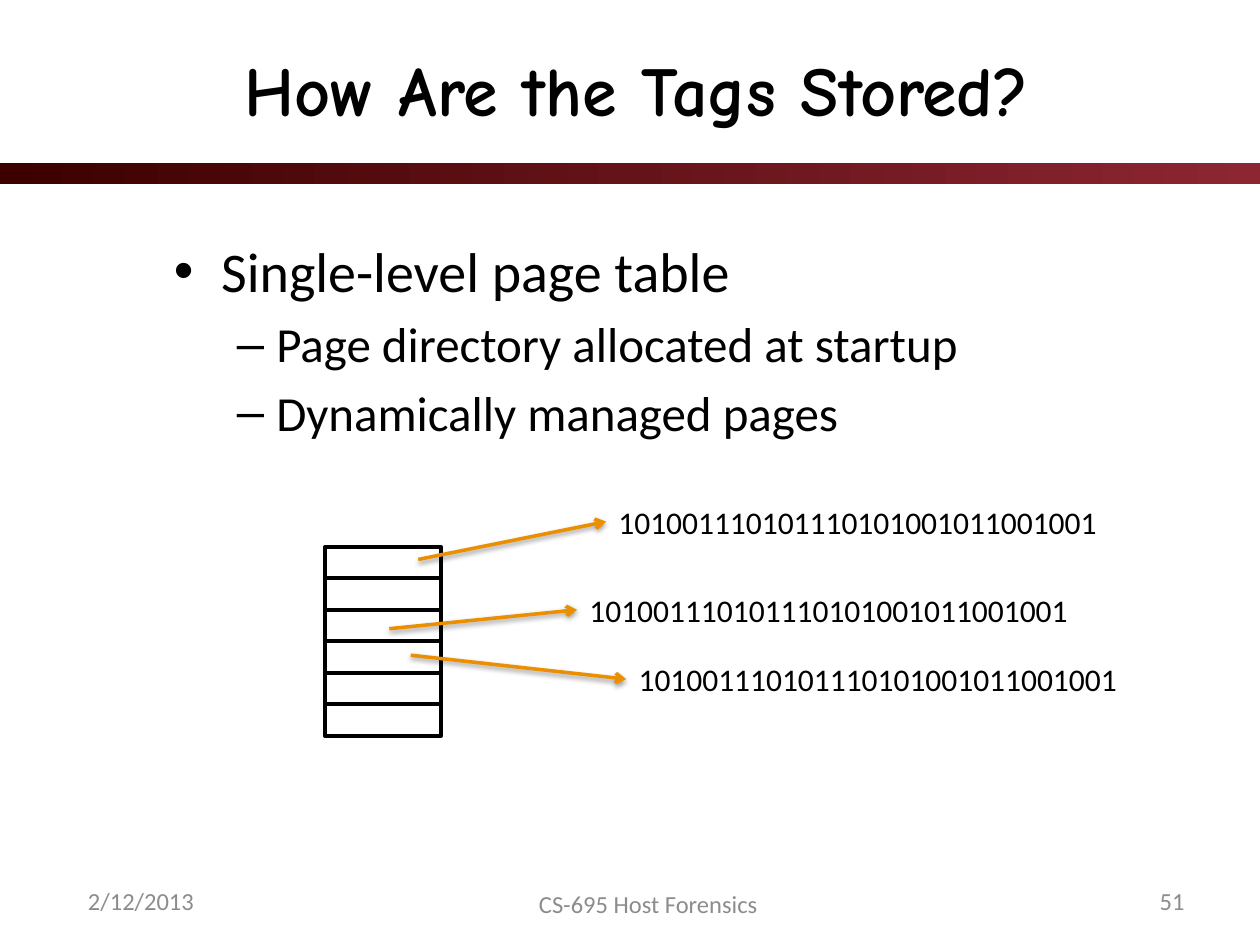
from dataclasses import dataclass

from lxml import etree
from pptx import Presentation
from pptx.dml.color import RGBColor
from pptx.enum import shapes, text
from pptx.oxml import parse_xml
from pptx.oxml.ns import nsdecls, qn
from pptx.util import Inches, Pt


@dataclass(frozen=True)
class Theme:
    ink: RGBColor = RGBColor.from_string("000000")
    muted: RGBColor = RGBColor.from_string("8C8C8C")
    arrow: RGBColor = RGBColor.from_string("EB8F00")
    bar_start: RGBColor = RGBColor.from_string("3C0000")
    bar_end: RGBColor = RGBColor.from_string("8C2633")
    title_font: str = "Comic Neue"
    body_font: str = "Calibri"
    title_size: int = 40
    list_sizes: tuple = (32, 28)
    bits_size: int = 18
    footer_size: int = 14


theme = Theme()


def format_para(para, size, color, font=theme.body_font, bold=False):
    for span in para.runs:
        span.font.name = font
        span.font.size = Pt(size)
        span.font.bold = bold
        span.font.color.rgb = color


def add_label(page, left, top, width, words, size, color, align, wrap):
    box = page.shapes.add_textbox(Inches(left), Inches(top), Inches(width), Inches(0.4))
    frame = box.text_frame
    frame.word_wrap = wrap
    frame.vertical_anchor = text.MSO_ANCHOR.MIDDLE
    frame.text = words
    frame.paragraphs[0].alignment = align
    format_para(frame.paragraphs[0], size, color)


deck = Presentation()
deck.slide_width, deck.slide_height = Inches(10), Inches(7.5)
page = deck.slides.add_slide(deck.slide_layouts[1])

bar = page.shapes.add_shape(
    shapes.MSO_SHAPE.RECTANGLE, Inches(0), Inches(1.29), Inches(10), Inches(0.17)
)
bar.shadow.inherit = False
bar.line.fill.background()
bar.fill.gradient()
bar.fill.gradient_angle = 0
for stop, color, position in zip(
    bar.fill.gradient_stops, (theme.bar_start, theme.bar_end), (0, 1)
):
    stop.color.rgb = color
    stop.position = position

title = page.shapes.title
title.left, title.top = Inches(0.6), Inches(0.15)
title.width, title.height = Inches(8.9), Inches(1.1)
title.text_frame.text = "How Are the Tags Stored?"
title.text_frame.vertical_anchor = text.MSO_ANCHOR.MIDDLE
format_para(
    title.text_frame.paragraphs[0], theme.title_size, theme.ink, theme.title_font, True
)

body = page.placeholders[1]
body.left, body.top = Inches(1.28), Inches(1.83)
body.width, body.height = Inches(8.5), Inches(4.5)
points = [
    ("Single-level page table", 0),
    ("Page directory allocated at startup", 1),
    ("Dynamically managed pages", 1),
]
body.text_frame.text = "\n".join(words for words, level in points)
for para, (words, level) in zip(body.text_frame.paragraphs, points):
    para.level = level
    format_para(para, theme.list_sizes[level], theme.ink)
body.text_frame.paragraphs[0].space_before = Pt(0)

row_height = 0.25
directory = page.shapes.add_group_shape()
for row in range(6):
    entry = directory.shapes.add_shape(
        shapes.MSO_SHAPE.RECTANGLE,
        Inches(2.58), Inches(4.34 + row * row_height), Inches(0.92), Inches(row_height),
    )
    entry.shadow.inherit = False
    entry.fill.background()
    entry.line.color.rgb = theme.ink
    entry.line.width = Pt(2.25)

bits = "101001110101110101001011001001"
links = [
    (3.32, 4.44, 4.81, 4.14),
    (3.09, 4.99, 4.58, 4.84),
    (3.26, 5.2, 4.97, 5.39),
]
for start_x, start_y, end_x, end_y in links:
    add_label(
        page, end_x, end_y - 0.2, 4.04, bits, theme.bits_size, theme.ink,
        text.PP_ALIGN.LEFT, False,
    )
    arrow = page.shapes.add_connector(
        shapes.MSO_CONNECTOR.STRAIGHT,
        Inches(start_x), Inches(start_y), Inches(end_x), Inches(end_y),
    )
    arrow.line.color.rgb = theme.arrow
    arrow.line.width = Pt(2)
    etree.SubElement(arrow.line._get_or_add_ln(), qn("a:tailEnd"), type="arrow")
    arrow._element.spPr.append(parse_xml(
        f'<a:effectLst {nsdecls("a")}>'
        f'<a:outerShdw blurRad="{Pt(3.1)}" dist="{Pt(1.6)}" dir="5400000" rotWithShape="0">'
        f'<a:srgbClr val="{theme.ink}"><a:alpha val="38000"/></a:srgbClr>'
        "</a:outerShdw></a:effectLst>"
    ))

footers = [
    (0.6, 6.95, 1.83, "2/12/2013", text.PP_ALIGN.LEFT),
    (3.9, 6.97, 2.49, "CS-695 Host Forensics", text.PP_ALIGN.CENTER),
    (7.67, 6.95, 1.83, "51", text.PP_ALIGN.RIGHT),
]
for left, top, width, words, align in footers:
    add_label(
        page, left, top, width, words, theme.footer_size, theme.muted, align, True
    )

deck.save("out.pptx")
